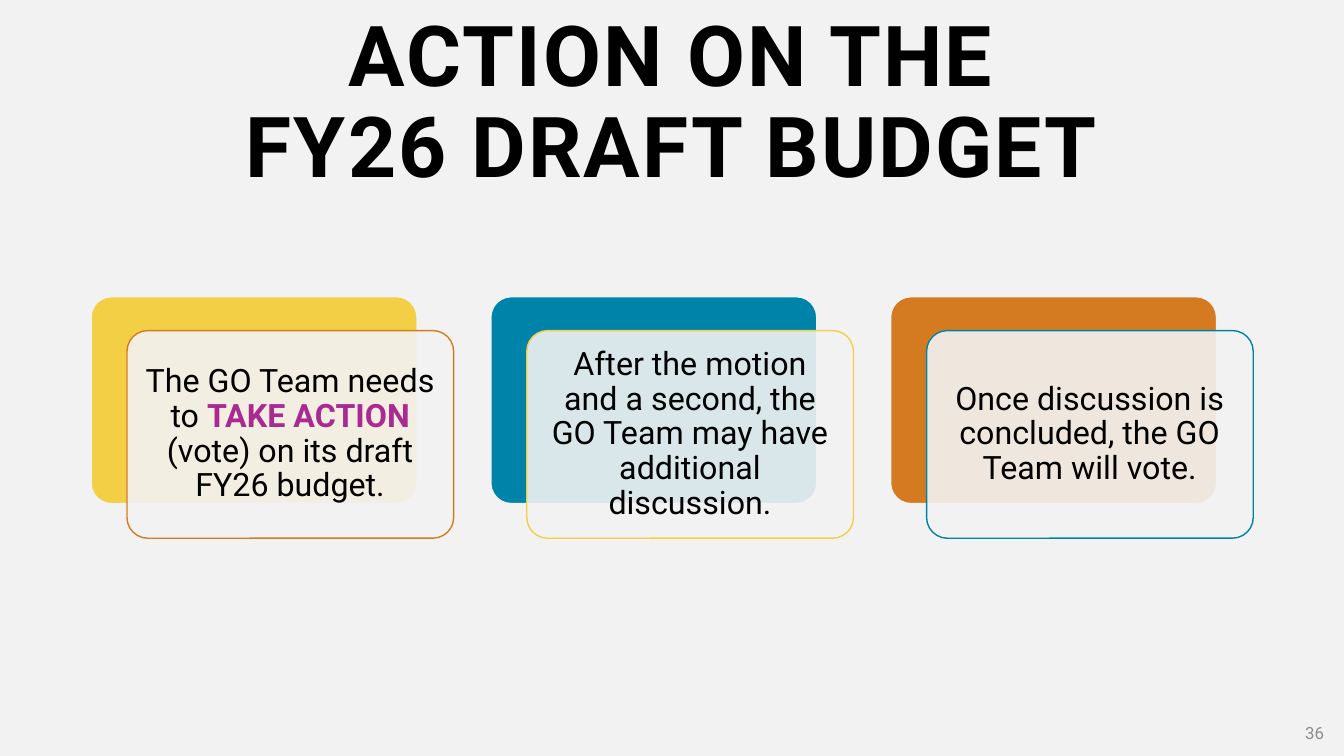
from lxml.etree import SubElement
from pptx import Presentation
from pptx.dml.color import RGBColor
from pptx.enum.shapes import MSO_SHAPE
from pptx.enum.text import MSO_ANCHOR, PP_ALIGN
from pptx.oxml.ns import qn
from pptx.util import Inches, Pt

# Content: each step is (runs, back colour, outline colour); a run is (text, emphasised)
TITLE = ["ACTION ON THE", "FY26 DRAFT BUDGET"]
PAGE_NUMBER = "36"
STEPS = [
    ([("The GO Team needs to ", False), ("TAKE ACTION ", True),
      ("(vote) on its draft FY26 budget.", False)], "yellow", "orange"),
    ([("After the motion and a second, the GO Team may have additional discussion.",
       False)], "blue", "yellow"),
    ([("Once discussion is concluded, the GO Team will vote.", False)],
     "orange", "blue"),
]

THEME = {
    "font": "Roboto",
    "colors": {"paper": "F2F2F2", "ink": "000000", "muted": "8C8C8C",
               "accent": "A92A91", "yellow": "F3CF45", "blue": "0083A9",
               "orange": "D47B22"},
    "sizes": {"title": 60, "step": 23, "page": 12},
    "title_spacing": 150,
    "line_spacing": 0.9,
    "veil_opacity": 90,
}

# Layout in inches
SLIDE_W, SLIDE_H = 13.33, 7.5
CARD_W, CARD_H = 3.24, 2.06
CARDS_LEFT, CARDS_TOP = 0.9, 2.94
CARD_PITCH = 3.965
FRONT_DX, FRONT_DY = 0.36, 0.34


def color(name):
    return RGBColor.from_string(THEME["colors"][name])


def add_run(paragraph, text, size, ink="ink", bold=False):
    run = paragraph.add_run()
    run.text = text
    run.font.name = THEME["font"]
    run.font.size = Pt(THEME["sizes"][size])
    run.font.bold = bold
    run.font.color.rgb = color(ink)
    return run


def prepare(shape, align, margin_x, margin_y):
    """Set up the text frame and return its first paragraph."""
    frame = shape.text_frame
    frame.word_wrap = True
    frame.vertical_anchor = MSO_ANCHOR.MIDDLE
    frame.margin_left = frame.margin_right = Inches(margin_x)
    frame.margin_top = frame.margin_bottom = Inches(margin_y)
    paragraph = frame.paragraphs[0]
    paragraph.alignment = align
    return paragraph


def add_card(slide, left, top, fill, outline, width):
    card = slide.shapes.add_shape(
        MSO_SHAPE.ROUNDED_RECTANGLE,
        Inches(left), Inches(top), Inches(CARD_W), Inches(CARD_H))
    card.adjustments[0] = 0.1
    card.shadow.inherit = False
    card.fill.solid()
    card.fill.fore_color.rgb = color(fill)
    card.line.color.rgb = color(outline)
    card.line.width = Pt(width)
    return card


def set_opacity(shape, percent):
    fill_color = shape.fill._xPr.find(qn("a:solidFill"))[0]
    SubElement(fill_color, qn("a:alpha")).set("val", str(percent * 1000))


def main():
    deck = Presentation()
    deck.slide_width, deck.slide_height = Inches(SLIDE_W), Inches(SLIDE_H)
    slide = deck.slides.add_slide(deck.slide_layouts[6])
    slide.background.fill.solid()
    slide.background.fill.fore_color.rgb = color("paper")

    # Title
    title = slide.shapes.add_textbox(0, Inches(0.3), Inches(SLIDE_W), Inches(1.48))
    heading = prepare(title, PP_ALIGN.CENTER, 0, 0)
    heading.line_spacing = THEME["line_spacing"]
    for index, line in enumerate(TITLE):
        if index:
            heading.add_line_break()
        run = add_run(heading, line, "title", bold=True)
        run._r.get_or_add_rPr().set("spc", str(THEME["title_spacing"]))

    # Page number
    page = slide.shapes.add_textbox(
        Inches(10.23), Inches(7.07), Inches(3), Inches(0.4))
    add_run(prepare(page, PP_ALIGN.RIGHT, 0.1, 0.05), PAGE_NUMBER, "page", "muted")

    # Steps: a coloured card behind a translucent card with the text
    for index, (runs, back, outline) in enumerate(STEPS):
        left = CARDS_LEFT + index * CARD_PITCH
        add_card(slide, left, CARDS_TOP, back, "paper", 1.5)
        front = add_card(slide, left + FRONT_DX, CARDS_TOP + FRONT_DY,
                         "paper", outline, 1)
        set_opacity(front, THEME["veil_opacity"])
        step = prepare(front, PP_ALIGN.CENTER, 0.1, 0.1)
        step.line_spacing = THEME["line_spacing"]
        for text, emphasised in runs:
            add_run(step, text, "step", "accent" if emphasised else "ink", emphasised)

    deck.save("out.pptx")


if __name__ == "__main__":
    main()
